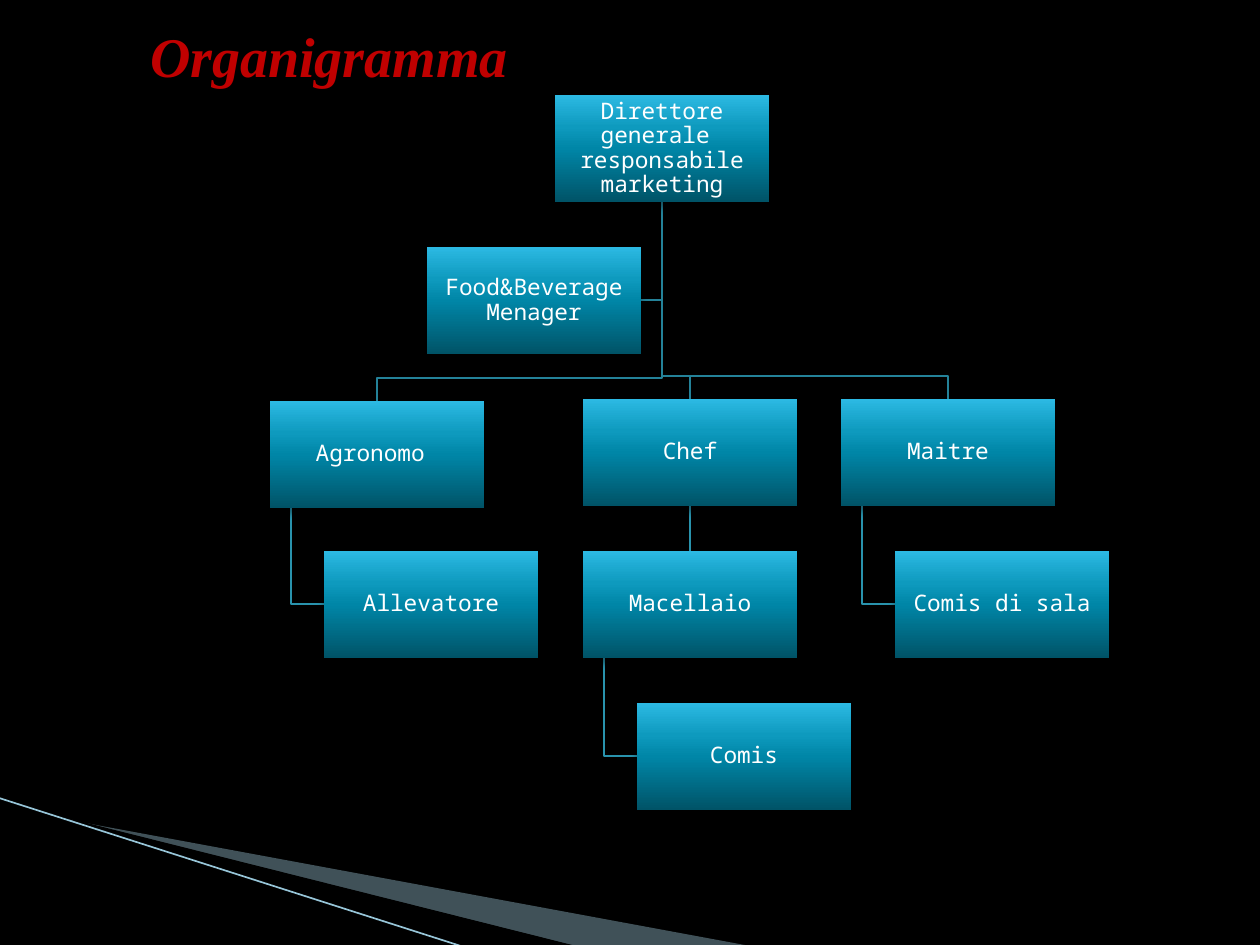
from lxml import etree
from pptx import Presentation
from pptx import util as u
from pptx.dml.color import RGBColor
from pptx.enum import shapes, text
from pptx.oxml import parse_xml
from pptx.oxml.ns import nsdecls, qn

SCALE = 914400 / 126  # EMU per px
BOX_W, BOX_H = 214, 107
TOP, ROW = 95, 152    # first row and row pitch
INDENT = 54           # shift of a hanging child
COLORS = {
    "background": "000000", "title": "C00000", "text": "FFFFFF",
    "wedge": "A0CBDC", "stripe": "97C5D8",
    "branch": "248299", "leaf": "2993AD",
}
GRADIENT = {0: "005367", 50: "0086A7", 70: "0E9ABE", 100: "2CB9E3"}
# name: (left, top, label)
BOXES = {
    "director": (555, TOP, "Direttore generale \vresponsabile marketing"),
    "food": (427, TOP + ROW, "Food&Beverage Menager"),
    "agronomist": (270, TOP + 2 * ROW + 2, "Agronomo "),
    "chef": (583, TOP + 2 * ROW, "Chef"),
    "maitre": (841, TOP + 2 * ROW, "Maitre"),
    "breeder": (270 + INDENT, TOP + 3 * ROW, "Allevatore"),
    "butcher": (583, TOP + 3 * ROW, "Macellaio"),
    "waiter": (841 + INDENT, TOP + 3 * ROW, "Comis di sala"),
    "commis": (583 + INDENT, TOP + 4 * ROW, "Comis"),
}


def px(n):
    return u.Emu(round(n * SCALE))


def rgb(name):
    return RGBColor.from_string(COLORS[name])


def add_path(s, points, closed):
    fb = s.shapes.build_freeform(*points[0], scale=SCALE)
    fb.add_line_segments(points[1:], close=closed)
    sp = fb.convert_to_shape()
    sp.shadow.inherit = False
    return sp


def add_polygon(s, points, color, alpha=100):
    sp = add_path(s, points, True)
    sp.fill.solid()
    sp.fill.fore_color.rgb = rgb(color)
    sp.line.fill.background()
    clr = sp.fill._xPr.find(qn("a:solidFill"))[0]
    etree.SubElement(clr, qn("a:alpha")).set("val", str(alpha * 1000))


def add_elbow(s, points, color):
    sp = add_path(s, points, False)
    sp.fill.background()
    sp.line.color.rgb = rgb(color)
    sp.line.width = u.Pt(0.75)


def add_line(s, start, end, color, width):
    cx = s.shapes.add_connector(shapes.MSO_CONNECTOR.STRAIGHT,
                                *map(px, start + end))
    cx.line.color.rgb = rgb(color)
    cx.line.width = u.Pt(width)
    etree.SubElement(cx._element.spPr, qn("a:effectLst"))


def add_box(s, left, top, label):
    sp = s.shapes.add_shape(shapes.MSO_SHAPE.RECTANGLE,
                            *map(px, (left, top, BOX_W, BOX_H)))
    sp.line.fill.background()
    # Gradient rising from dark to light, and a soft shadow below
    stops = "".join(f'<a:gs pos="{pos * 1000}"><a:srgbClr val="{c}"/></a:gs>'
                    for pos, c in GRADIENT.items())
    sp._element.spPr.find(qn("a:prstGeom")).addnext(parse_xml(
        f'<a:gradFill {nsdecls("a")} rotWithShape="1"><a:gsLst>{stops}</a:gsLst>'
        '<a:lin ang="16200000" scaled="0"/></a:gradFill>'))
    sp._element.spPr.append(parse_xml(
        f'<a:effectLst {nsdecls("a")}><a:outerShdw blurRad="50800" dist="38100" '
        'dir="5400000" rotWithShape="0"><a:srgbClr val="000000">'
        '<a:alpha val="35000"/></a:srgbClr></a:outerShdw></a:effectLst>'))

    tf = sp.text_frame
    tf.word_wrap = True
    tf.vertical_anchor = text.MSO_ANCHOR.MIDDLE
    tf.margin_left = tf.margin_right = tf.margin_top = tf.margin_bottom = px(1)
    p = tf.paragraphs[0]
    p.text = label
    p.alignment = text.PP_ALIGN.CENTER
    p.line_spacing = 0.9
    for r in p.runs:
        r.font.name = "Noto Sans Mono"
        r.font.size = u.Pt(13)
        r.font.color.rgb = rgb("text")


def add_branch(s, parent, child):
    """Bottom centre of the parent to top centre of the child."""
    (pl, pt, _), (cl, ct, _) = BOXES[parent], BOXES[child]
    x1, x2, bend = pl + BOX_W // 2, cl + BOX_W // 2, ct - 23
    add_elbow(s, [(x1, pt + BOX_H), (x1, bend), (x2, bend), (x2, ct)], "branch")


def add_hanger(s, parent, child):
    """Lower left of the parent to the left side of the child."""
    (pl, pt, _), (cl, ct, _) = BOXES[parent], BOXES[child]
    x, y = pl + 21, ct + BOX_H // 2
    add_elbow(s, [(x, pt + BOX_H), (x, y), (cl, y)], "leaf")


def add_assistant(s, parent, child):
    """Bottom centre of the parent to the right side of the child."""
    (pl, pt, _), (cl, ct, _) = BOXES[parent], BOXES[child]
    x, y = pl + BOX_W // 2, ct + BOX_H // 2
    add_elbow(s, [(x, pt + BOX_H), (x, y), (cl + BOX_W, y)], "branch")


def set_title(s, label):
    sp = s.shapes.title
    sp.left, sp.top, sp.width, sp.height = map(px, (123, 15, 401, 118))
    tf = sp.text_frame
    tf.text = label
    tf.word_wrap = False
    tf.auto_size = text.MSO_AUTO_SIZE.NONE
    tf.vertical_anchor = text.MSO_ANCHOR.TOP
    tf.margin_left = px(27)
    p = tf.paragraphs[0]
    p.alignment = text.PP_ALIGN.LEFT
    f = p.runs[0].font
    f.name, f.size, f.bold, f.italic = "Times New Roman", u.Pt(32), True, True
    f.color.rgb = rgb("title")


def main():
    prs = Presentation()
    prs.slide_width, prs.slide_height = px(1260), px(945)
    s = prs.slides.add_slide(prs.slide_layouts[5])
    s.background.fill.solid()
    s.background.fill.fore_color.rgb = rgb("background")

    # Corner decoration
    add_polygon(s, [(69, 820), (750, 946), (575, 946), (69, 819)], "wedge", 40)
    add_polygon(s, [(67, 818), (576, 946), (469, 948), (68, 819)], "background")
    add_line(s, (-1, 798), (467, 948), "stripe", 0.95)

    # Links, behind the boxes
    add_assistant(s, "director", "food")
    for child in ("maitre", "chef", "agronomist"):
        add_branch(s, "director", child)
    for parent, child in (("maitre", "waiter"), ("butcher", "commis"),
                          ("agronomist", "breeder")):
        add_hanger(s, parent, child)
    left, top, _ = BOXES["chef"]
    x = left + BOX_W // 2
    add_line(s, (x, top + BOX_H), (x, top + ROW), "leaf", 0.75)

    # Roles
    for box in BOXES.values():
        add_box(s, *box)

    set_title(s, "Organigramma")
    prs.save("out.pptx")


if __name__ == "__main__":
    main()
